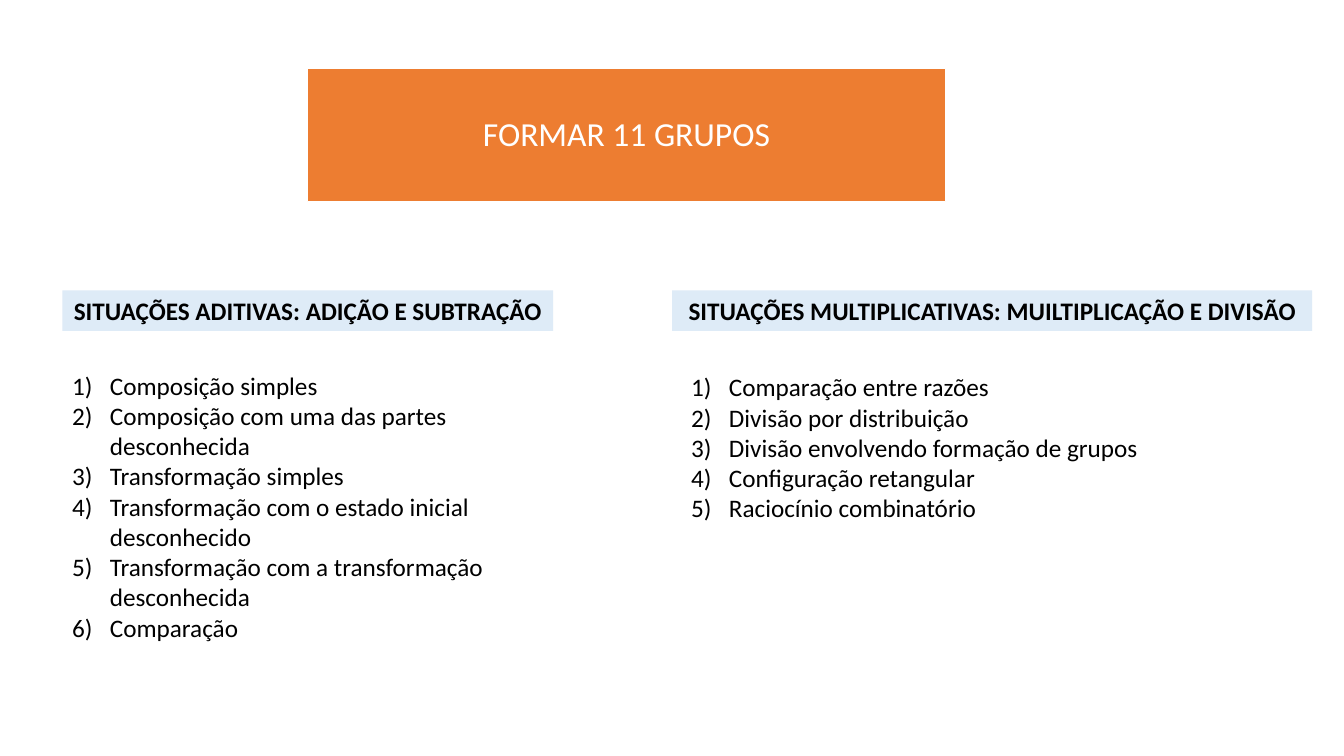
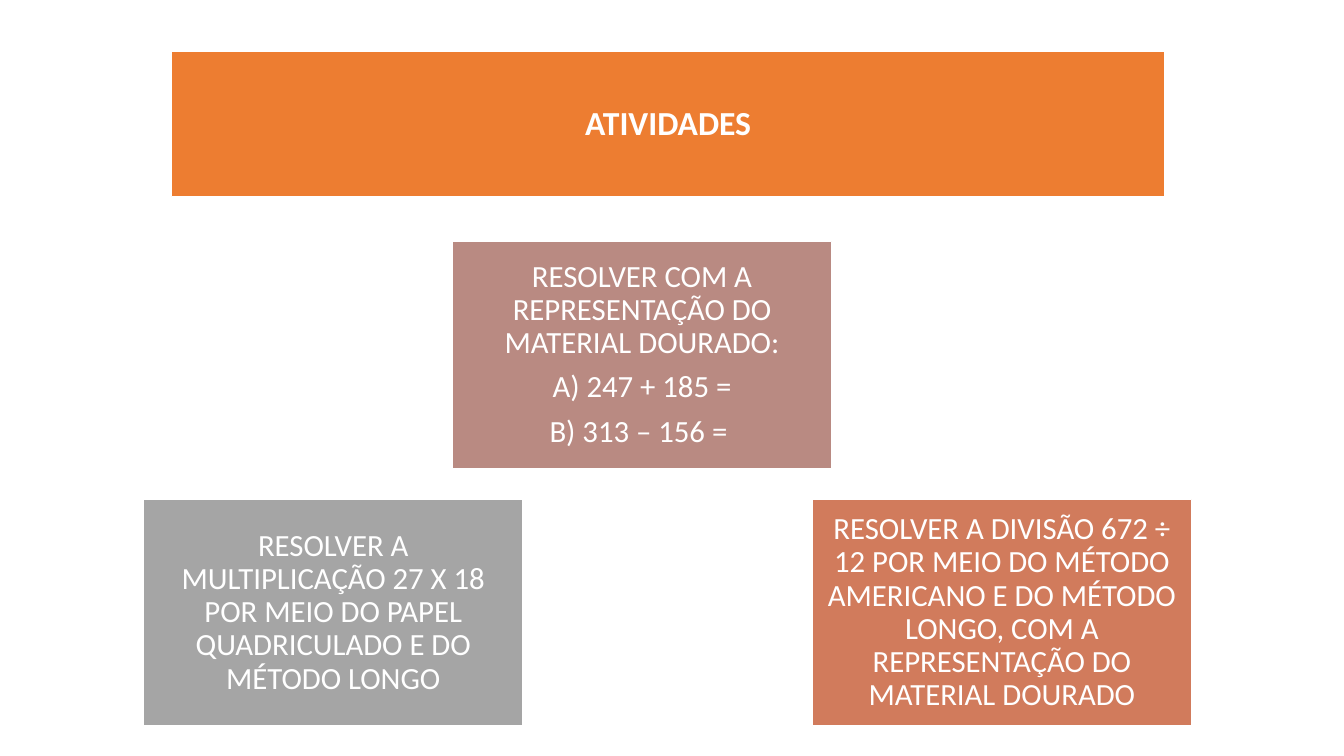
from dataclasses import dataclass

from lxml.etree import SubElement
from pptx import Presentation
from pptx.dml.color import RGBColor as RGB
from pptx.enum.shapes import MSO_SHAPE as SHAPE
from pptx.enum.text import MSO_ANCHOR as ANCHOR, PP_ALIGN as ALIGN
from pptx.oxml.ns import qn
from pptx.util import Cm, Pt


@dataclass(frozen=True)
class Theme:
    font: str = "Calibri"
    white: str = "FFFFFF"
    black: str = "000000"
    orange: str = "ED7D31"
    pale_blue: str = "DEEBF7"
    rose: str = "B98A82"
    gray: str = "A5A5A5"
    terracotta: str = "D17B5C"
    title_size: int = 24
    card_size: int = 22
    body_size: int = 18


THEME = Theme()


def write(tf, lines, size=THEME.body_size, color=THEME.black, bold=False,
          align=ALIGN.LEFT, anchor=ANCHOR.TOP, spacing=None, after=0,
          inset=None, numbered=False):
    tf.word_wrap = True
    tf.vertical_anchor = anchor
    if inset is not None:
        tf.margin_left = tf.margin_right = Cm(inset)
        tf.margin_top = tf.margin_bottom = Cm(inset)
    for i, line in enumerate(lines):
        p = tf.add_paragraph() if i else tf.paragraphs[0]
        p.alignment = align
        p.line_spacing = spacing
        if i < len(lines) - 1:
            p.space_after = Pt(after)
        if numbered:
            pPr = p._p.get_or_add_pPr()
            indent = Cm(0.95)
            pPr.set("marL", str(indent))
            pPr.set("indent", str(-indent))
            SubElement(pPr, qn("a:buFont"), typeface="+mj-lt")
            SubElement(pPr, qn("a:buAutoNum"), type="arabicParenR")
        r = p.add_run()
        r.text = line
        r.font.name = THEME.font
        r.font.size = Pt(size)
        r.font.bold = bold
        r.font.color.rgb = RGB.from_string(color)


class Deck:
    def __init__(self):
        self.prs = Presentation()
        self.prs.slide_width = Cm(33.87)
        self.prs.slide_height = Cm(19.05)
        self.s = None

    def slide(self):
        self.s = self.prs.slides.add_slide(self.prs.slide_layouts[6])

    def box(self, x, y, w, h, fill, line=None):
        sp = self.s.shapes.add_shape(SHAPE.RECTANGLE, Cm(x), Cm(y), Cm(w), Cm(h))
        sp.shadow.inherit = False
        sp.fill.solid()
        sp.fill.fore_color.rgb = RGB.from_string(fill)
        if line:
            sp.line.color.rgb = RGB.from_string(line)
            sp.line.width = Pt(1)
        else:
            sp.line.fill.background()
        return sp.text_frame

    def block(self, x, y, w, h, lines, fill, **fmt):
        write(self.box(x, y, w, h, fill, THEME.white), lines, color=THEME.white,
              align=ALIGN.CENTER, anchor=ANCHOR.MIDDLE, spacing=0.9, after=8, **fmt)

    def banner(self, x, y, w, h, text, bold=False):
        self.block(x, y, w, h, [text], THEME.orange,
                   size=THEME.title_size, bold=bold, inset=0.25)

    def card(self, x, y, lines, fill):
        self.block(x, y, 9.56, 5.72, lines, fill, size=THEME.card_size, inset=0.23)

    def heading(self, x, w, text):
        write(self.box(x, 7.32, w, 1.02, THEME.pale_blue), [text],
              bold=True, align=ALIGN.CENTER)

    def numbered_list(self, x, y, h, items):
        sp = self.s.shapes.add_textbox(Cm(x), Cm(y), Cm(12.37), Cm(h))
        write(sp.text_frame, items, numbered=True)


def main():
    deck = Deck()

    deck.slide()
    deck.banner(7.75, 1.73, 16.08, 3.35, "FORMAR 11 GRUPOS")
    deck.heading(1.57, 12.37, "SITUAÇÕES ADITIVAS: ADIÇÃO E SUBTRAÇÃO")
    deck.heading(16.94, 16.13, "SITUAÇÕES MULTIPLICATIVAS: MUILTIPLICAÇÃO E DIVISÃO")
    deck.numbered_list(1.57, 9.2, 7.19, [
        "Composição simples",
        "Composição com uma das partes desconhecida",
        "Transformação simples",
        "Transformação com o estado inicial desconhecido",
        "Transformação com a transformação desconhecida",
        "Comparação",
    ])
    deck.numbered_list(17.17, 9.24, 5.64, [
        "Comparação entre razões",
        "Divisão por distribuição",
        "Divisão envolvendo formação de grupos",
        "Configuração retangular",
        "Raciocínio combinatório",
    ])

    deck.slide()
    deck.banner(4.32, 1.3, 25.04, 3.66, "ATIVIDADES", bold=True)
    lower_row = 12.58
    deck.card(20.47, lower_row, [
        "RESOLVER A DIVISÃO 672 ÷ 12 POR MEIO DO MÉTODO AMERICANO "
        "E DO MÉTODO LONGO, COM A REPRESENTAÇÃO DO MATERIAL DOURADO",
    ], THEME.terracotta)
    deck.card(11.4, 6.08, [
        "RESOLVER COM A REPRESENTAÇÃO DO MATERIAL DOURADO:",
        "A) 247 + 185 =",
        "B) 313 – 156 = ",
    ], THEME.rose)
    deck.card(3.62, lower_row, [
        "RESOLVER A MULTIPLICAÇÃO 27 X 18 POR MEIO DO PAPEL "
        "QUADRICULADO E DO MÉTODO LONGO",
    ], THEME.gray)

    deck.prs.save("out.pptx")


if __name__ == "__main__":
    main()
